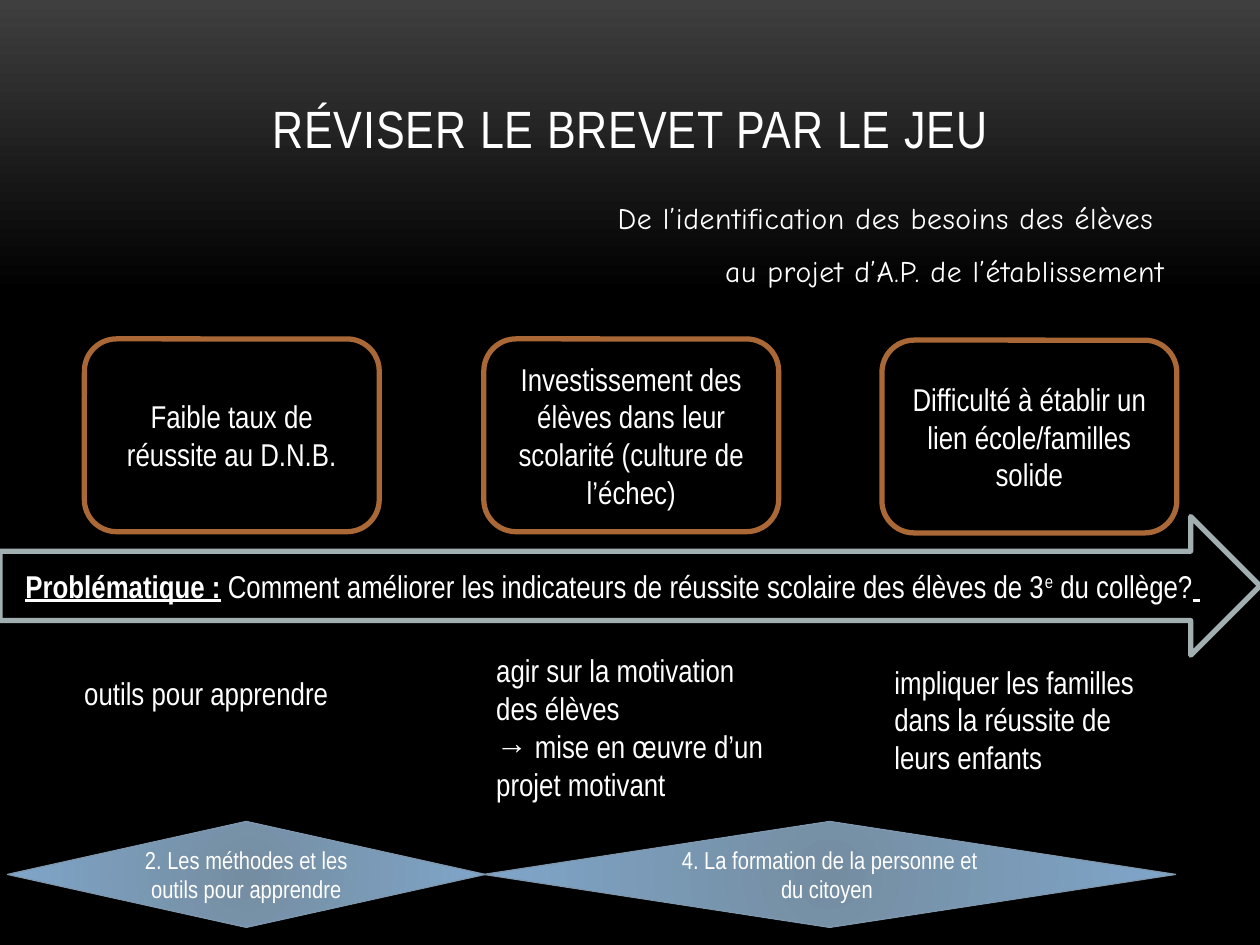
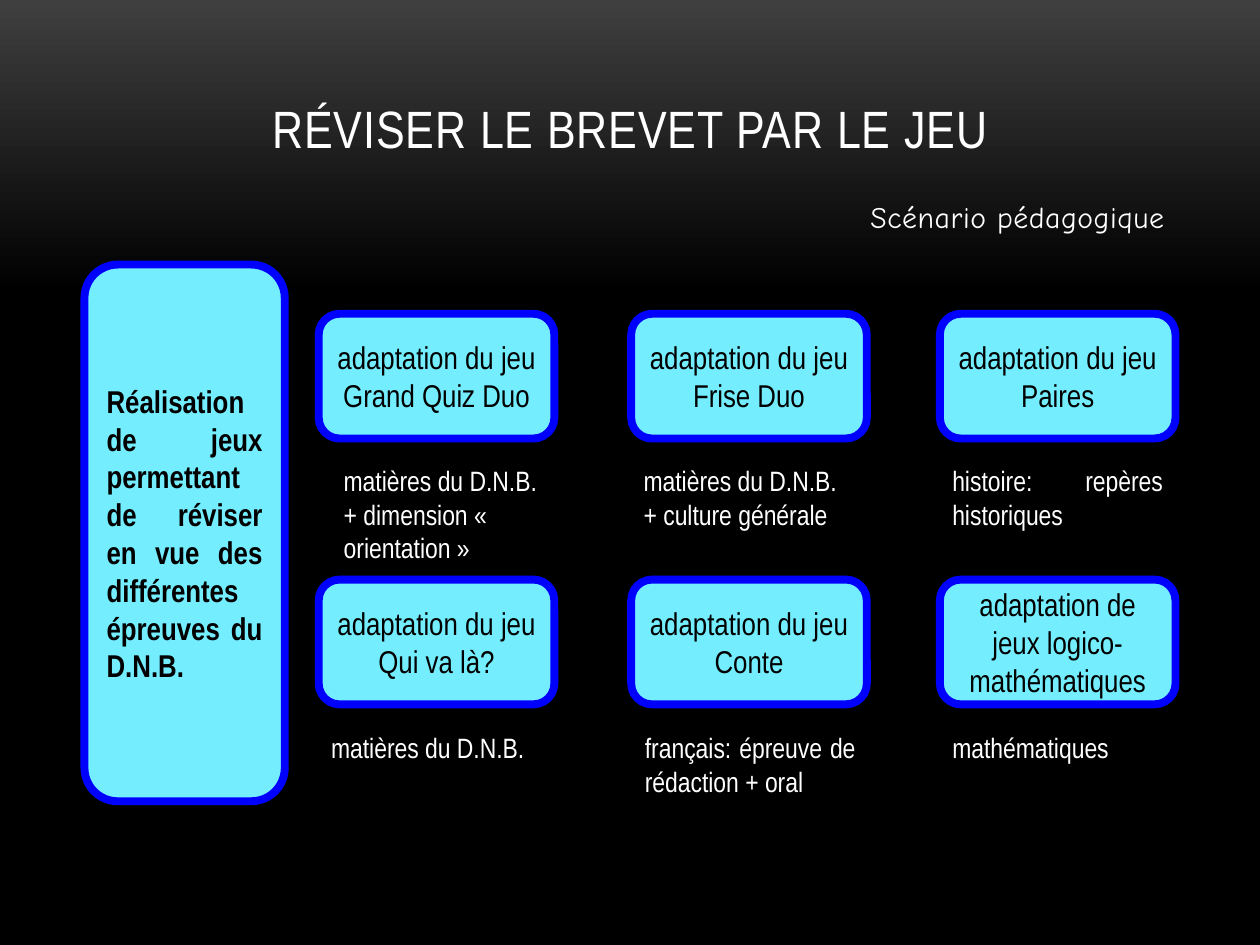
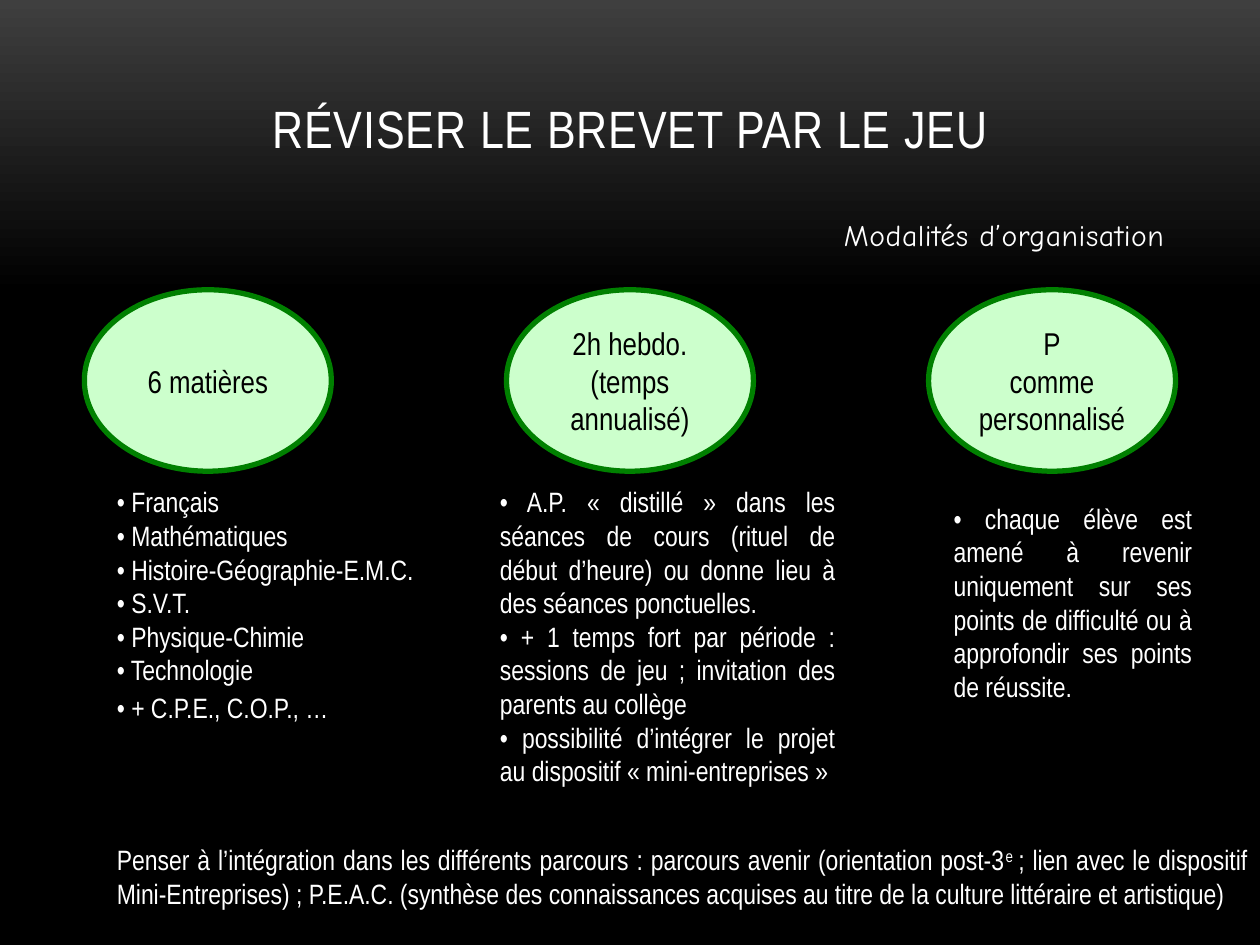
"""Build three slides on revising for the brevet exam through games."""
from dataclasses import dataclass, replace
from typing import Optional

from lxml import etree
from pptx import Presentation
from pptx import util as u
from pptx.dml import color
from pptx.enum import shapes, text
from pptx.oxml import ns

COLOURS = {
    "white": "FFFFFF", "black": "000000", "top": "3F3F3F",
    "copper": "AA6837", "silver": "A2AFB1",
    "steel": "758DA1", "sky": "7FA6CA", "slate": "7E97AD",
    "cyan": "74EEFF", "blue": "0000FF", "mint": "CCFFCC", "green": "008000",
}
SHAPE = shapes.MSO_SHAPE
ALIGN = text.PP_ALIGN
ANCHOR = text.MSO_ANCHOR


@dataclass(frozen=True)
class Run:
    text: str
    strong: bool = False
    superscript: bool = False


@dataclass(frozen=True)
class Style:
    size: float = 18
    colour: str = "white"
    align: ALIGN = ALIGN.LEFT
    anchor: ANCHOR = ANCHOR.TOP
    font: str = "Arial Narrow"
    bold: bool = False
    tracking: float = 0
    before: float = 0
    after: float = 0
    grow: bool = False
    shape: Optional[SHAPE] = None
    fill: Optional[str] = None
    glow: Optional[tuple[str, str]] = None
    line: str = "white"
    weight: float = 3


@dataclass(frozen=True)
class Box:
    style: Style
    x: float
    y: float
    w: float
    h: float
    paragraphs: tuple[str | tuple[Run, ...], ...]


TITLE = Style(size=30, align=ALIGN.CENTER, anchor=ANCHOR.BOTTOM, tracking=0.5)
SUBTITLE = Style(size=17, align=ALIGN.RIGHT, font="Comic Neue", tracking=0.3, before=3.4, after=6)
SHAPED = Style(align=ALIGN.CENTER, anchor=ANCHOR.MIDDLE)
NEED = replace(SHAPED, shape=SHAPE.ROUNDED_RECTANGLE, line="copper")
ARROW = replace(SHAPED, shape=SHAPE.RIGHT_ARROW, line="silver")
DIAMOND = replace(SHAPED, shape=SHAPE.DIAMOND, size=14, glow=("steel", "sky"),
                  line="slate", weight=0.75)
GAME = replace(SHAPED, shape=SHAPE.ROUNDED_RECTANGLE, colour="black", fill="cyan",
               line="blue", weight=4.5)
GOAL = replace(GAME, align=ALIGN.JUSTIFY, bold=True)
OVAL = replace(SHAPED, shape=SHAPE.OVAL, colour="black", fill="mint", line="green")
ANSWER = Style(grow=True)
NOTE = Style(size=16, grow=True)
JUSTIFIED = replace(NOTE, align=ALIGN.JUSTIFY)


def rgb(name: str) -> color.RGBColor:
    """Return the named colour."""
    return color.RGBColor.from_string(COLOURS[name])


def set_gradient(fill, start: str, end: str) -> None:
    """Give a fill a gradient between two named colours."""
    fill.gradient()
    for stop, name in zip(fill.gradient_stops, (start, end)):
        stop.color.rgb = rgb(name)


def set_radial(sp, start: str, end: str) -> None:
    """Fill a shape with a gradient that spreads from its centre."""
    set_gradient(sp.fill, start, end)
    lin = sp.element.spPr.find(".//" + ns.qn("a:lin"))
    path = etree.Element(ns.qn("a:path"), {"path": "circle"})
    etree.SubElement(path, ns.qn("a:fillToRect"), dict.fromkeys("ltrb", "100000"))
    lin.getparent().replace(lin, path)


def add_run(p, run: Run, style: Style) -> None:
    """Add one formatted run to a paragraph."""
    r = p.add_run()
    r.text = run.text
    r.font.name, r.font.size = style.font, u.Pt(style.size)
    r.font.color.rgb = rgb(style.colour)
    r.font.bold = style.bold or run.strong
    r.font.underline = run.strong
    rPr = r._r.get_or_add_rPr()
    if style.tracking:
        rPr.set("spc", str(round(style.tracking * 100)))
    if run.superscript:
        rPr.set("baseline", "30000")


def write(tf, box: Box) -> None:
    """Write the paragraphs of a box into its text frame."""
    style = box.style
    tf.word_wrap = True
    tf.vertical_anchor = style.anchor
    if style.grow:
        tf.auto_size = text.MSO_AUTO_SIZE.SHAPE_TO_FIT_TEXT
    for i, content in enumerate(box.paragraphs):
        p = tf.add_paragraph() if i else tf.paragraphs[0]
        p.alignment = style.align
        p.space_before = u.Pt(style.before if i else 0)
        p.space_after = u.Pt(style.after)
        for run in (Run(content),) if isinstance(content, str) else content:
            add_run(p, run, style)


def draw(s, box: Box) -> None:
    """Draw a box as a preset shape or a text box."""
    style = box.style
    area = [u.Inches(v) for v in (box.x, box.y, box.w, box.h)]
    if style.shape is None:
        sp = s.shapes.add_textbox(*area)
    else:
        sp = s.shapes.add_shape(style.shape, *area)
        sp.shadow.inherit = False
        if style.glow:
            set_radial(sp, *style.glow)
        elif style.fill:
            sp.fill.solid()
            sp.fill.fore_color.rgb = rgb(style.fill)
        else:
            sp.fill.background()
        sp.line.color.rgb = rgb(style.line)
        sp.line.width = u.Pt(style.weight)
    write(sp.text_frame, box)


def add_slide(prs, subtitle: Box, boxes: list[Box]) -> None:
    """Add a slide with the shared title, a subtitle and its boxes."""
    s = prs.slides.add_slide(prs.slide_layouts[6])
    title = Box(TITLE, 0.67, 0.3, 8.67, 1.01, ("RÉVISER LE BREVET PAR LE JEU",))
    for box in (title, subtitle, *boxes):
        draw(s, box)


def subtitle(y: float, h: float, *lines: str) -> Box:
    """Return a subtitle box at the given height."""
    return Box(SUBTITLE, 0.67, y, 8.67, h, lines)


def needs() -> list[Box]:
    """Return the boxes that lead from needs to the project."""
    problems = (
        (0.67, 2.69, "Faible taux de réussite au D.N.B."),
        (3.84, 2.69, "Investissement des élèves dans leur scolarité (culture de l’échec)"),
        (7, 2.7, "Difficulté à établir un lien école/familles solide"),
    )
    question = (
        Run("Problématique :", strong=True),
        Run(" Comment améliorer les indicateurs de réussite scolaire des élèves de 3"),
        Run("e", superscript=True),
        Run(" du collège?"),
        Run(" ", strong=True),
    )
    return [
        *(Box(NEED, x, y, 2.34, 1.53, (label,)) for x, y, label in problems),
        Box(ARROW, 0, 4.1, 10, 1.1, (question,)),
        Box(ANSWER, 3.84, 5.12, 2.34, 1.31,
            ("agir sur la motivation des élèves", "→ mise en œuvre d’un projet motivant")),
        Box(ANSWER, 7, 5.21, 2.34, 1.01,
            ("impliquer les familles dans la réussite de leurs enfants",)),
        Box(ANSWER, 0.57, 5.3, 2.44, 0.4, ("outils pour apprendre",)),
        Box(DIAMOND, 0.06, 6.52, 3.79, 0.84, ("2. Les méthodes et les outils pour apprendre",)),
        Box(DIAMOND, 3.84, 6.52, 5.49, 0.84, ("4. La formation de la personne et du citoyen ",)),
    ]


def games() -> list[Box]:
    """Return the goal, the grid of games and their school subjects."""
    columns, rows = (2.53, 5.01, 7.46), (2.49, 4.6)
    names = (
        ("du jeu Grand Quiz Duo", "du jeu Frise Duo", "du jeu Paires"),
        ("du jeu Qui va là?", "du jeu Conte", "de jeux logico-mathématiques"),
    )
    return [
        Box(GOAL, 0.67, 2.1, 1.59, 4.26,
            ("Réalisation de jeux permettant de réviser en vue des différentes "
             "épreuves du D.N.B.",)),
        *(Box(GAME, x, y, 1.87, 0.99, (f"adaptation {name}",))
          for y, row in zip(rows, names) for x, name in zip(columns, row)),
        Box(NOTE, 2.63, 3.63, 1.77, 0.91,
            ("matières du D.N.B.", "+ dimension « orientation »")),
        Box(NOTE, 5.01, 3.63, 1.87, 0.64, ("matières du D.N.B.", "+ culture générale")),
        Box(JUSTIFIED, 7.46, 3.63, 1.87, 0.64, ("histoire: repères historiques",)),
        Box(JUSTIFIED, 2.53, 5.75, 1.87, 0.37, ("matières du D.N.B.",)),
        Box(JUSTIFIED, 5.02, 5.75, 1.87, 0.64, ("français: épreuve de rédaction + oral",)),
        Box(JUSTIFIED, 7.46, 5.75, 1.87, 0.37, ("mathématiques",)),
    ]


def organisation() -> list[Box]:
    """Return the three principles, their details and the closing remark."""
    principles = (
        ("6 matières",),
        ("2h hebdo.", "(temps annualisé)"),
        ("P", "comme personnalisé"),
    )
    subjects = ("Français", "Mathématiques", "Histoire-Géographie-E.M.C.", "S.V.T.",
                "Physique-Chimie", "Technologie")
    remark = (
        Run("Penser à l’intégration dans les différents parcours : parcours avenir "
            "(orientation post-3"),
        Run("e ", superscript=True),
        Run("; lien avec le dispositif Mini-Entreprises) ; P.E.A.C. (synthèse des "
            "connaissances acquises au titre de la culture littéraire et artistique)"),
    )
    return [
        *(Box(OVAL, 0.67 + 3.35 * i, 2.3, 1.96, 1.44, lines)
          for i, lines in enumerate(principles)),
        Box(NOTE, 0.83, 3.8, 2.59, 1.72, tuple(f"• {name}" for name in subjects)),
        Box(JUSTIFIED, 7.47, 3.93, 2.09, 1.72,
            ("• chaque élève est amené à revenir uniquement sur ses points de difficulté "
             "ou à approfondir ses points de réussite.",)),
        Box(JUSTIFIED, 3.87, 3.8, 2.86, 2.52,
            ("• A.P. « distillé » dans les séances de cours (rituel de début d’heure) "
             "ou donne lieu à des séances ponctuelles.",
             "• + 1 temps fort par période : sessions de jeu ; invitation des parents "
             "au collège",
             "• possibilité d’intégrer le projet au dispositif « mini-entreprises »")),
        Box(NOTE, 0.83, 5.43, 1.9, 0.37, ("• + C.P.E., C.O.P., …",)),
        Box(JUSTIFIED, 0.83, 6.64, 9.17, 0.64, (remark,)),
    ]


def main() -> None:
    """Build and save the presentation."""
    prs = Presentation()
    prs.slide_width, prs.slide_height = u.Inches(10), u.Inches(7.5)
    backdrop = prs.slide_master.background.fill
    set_gradient(backdrop, "top", "black")
    backdrop.gradient_angle = 270
    backdrop.gradient_stops[1].position = 0.31
    add_slide(prs, subtitle(1.54, 0.94, "De l’identification des besoins des élèves ",
                            "au projet d’A.P. de l’établissement"), needs())
    add_slide(prs, subtitle(1.53, 0.48, "Scénario pédagogique"), games())
    add_slide(prs, subtitle(1.67, 0.63, "Modalités d’organisation"), organisation())
    prs.save("out.pptx")


if __name__ == "__main__":
    main()
